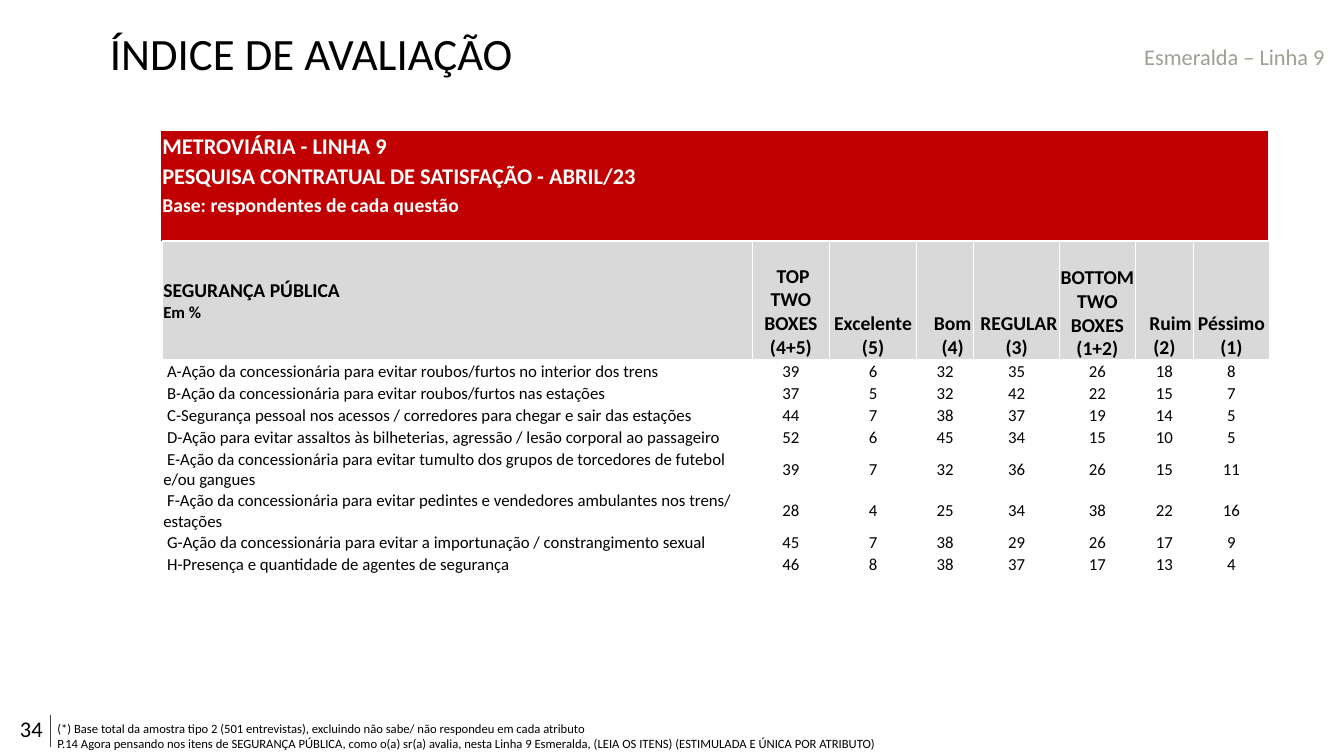
from lxml import etree
from pptx import Presentation
from pptx.dml.color import RGBColor
from pptx.enum.shapes import MSO_CONNECTOR
from pptx.enum.text import MSO_ANCHOR, PP_ALIGN
from pptx.oxml.ns import qn
from pptx.util import Inches, Pt

LEFT, CENTER = PP_ALIGN.LEFT, PP_ALIGN.CENTER
TOP, MIDDLE, BOTTOM = MSO_ANCHOR.TOP, MSO_ANCHOR.MIDDLE, MSO_ANCHOR.BOTTOM
STRAIGHT = MSO_CONNECTOR.STRAIGHT
FONT = "Calibri"
NO_STYLE = "{2D5ABB26-0587-4C30-8999-92F81FD0307C}"
BLACK, WHITE, RED, SILVER = "000000", "FFFFFF", "C00000", "D9D9D9"
GRAY, DARK = "9F9F95", "404040"

TITLE = "ÍNDICE DE AVALIAÇÃO"
LINE_NAME = "Esmeralda – Linha 9"
PAGE = "34"
NOTES = [
    "(*) Base total da amostra tipo 2 (501 entrevistas), excluindo não sabe/ não respondeu em cada atributo",
    "P.14 Agora pensando nos itens de SEGURANÇA PÚBLICA, como o(a) sr(a) avalia, nesta Linha 9 Esmeralda, "
    "(LEIA OS ITENS) (ESTIMULADA E ÚNICA POR ATRIBUTO)",
]

BANNER = [
    ("METROVIÁRIA - LINHA 9", 16, 0.3),
    ("PESQUISA CONTRATUAL DE SATISFAÇÃO - ABRIL/23", 16, 0.3),
    ("Base: respondentes de cada questão", 14, 0.28),
    ("", 10, 0.21),
]
BANNER_COLS = [5.19, 0.77, 0.85, 0.6, 0.85, 1.02, 0.6, 1.1]

TOPIC = [("SEGURANÇA PÚBLICA", 14), ("Em %", 12)]
HEADERS = [
    (" TOP TWO BOXES (4+5)", 0, 0),
    ("Excelente (5)", 0, 0),
    ("Bom (4)", 0.15, 0),
    (" REGULAR (3)", 0, 0),
    (" BOTTOM TWO BOXES (1+2)", 0, 0),
    ("Ruim (2)", 0, 0.12),
    ("Péssimo (1)", 0, 0),
]
RATING_COLS = [5.85, 0.77, 0.86, 0.57, 0.85, 0.75, 0.58, 0.75]
HEADER_H, ONE_LINE, TWO_LINES = 1.18, 0.22, 0.41
RATINGS = [
    (" A-Ação da concessionária para evitar roubos/furtos no interior dos trens",
     (39, 6, 32, 35, 26, 18, 8), ONE_LINE),
    (" B-Ação da concessionária para evitar roubos/furtos nas estações",
     (37, 5, 32, 42, 22, 15, 7), ONE_LINE),
    (" C-Segurança pessoal nos acessos / corredores para chegar e sair das estações",
     (44, 7, 38, 37, 19, 14, 5), ONE_LINE),
    (" D-Ação para evitar assaltos às bilheterias, agressão / lesão corporal ao passageiro",
     (52, 6, 45, 34, 15, 10, 5), ONE_LINE),
    (" E-Ação da concessionária para evitar tumulto dos grupos de torcedores de futebol e/ou gangues",
     (39, 7, 32, 36, 26, 15, 11), TWO_LINES),
    (" F-Ação da concessionária para evitar pedintes e vendedores ambulantes nos trens/ estações",
     (28, 4, 25, 34, 38, 22, 16), TWO_LINES),
    (" G-Ação da concessionária para evitar a importunação / constrangimento sexual",
     (45, 7, 38, 29, 26, 17, 9), ONE_LINE),
    (" H-Presença e quantidade de agentes de segurança",
     (46, 8, 38, 37, 17, 13, 4), ONE_LINE),
]


def rgb(color):
    return RGBColor.from_string(color)


def add_run(p, text, size, color=BLACK, bold=False):
    r = p.add_run()
    r.text = text
    r.font.name, r.font.size, r.font.bold = FONT, Pt(size), bold
    r.font.color.rgb = rgb(color)


def add_text(s, box, lines, size, color=BLACK, wrap=False):
    tf = s.shapes.add_textbox(*map(Inches, box)).text_frame
    tf.word_wrap = wrap
    for i, line in enumerate(lines):
        p = tf.paragraphs[0] if i == 0 else tf.add_paragraph()
        add_run(p, line, size, color)


def add_grid(s, left, top, cols, heights):
    frame = s.shapes.add_table(len(heights), len(cols), Inches(left), Inches(top),
                               Inches(sum(cols)), Inches(sum(heights)))
    table = frame.table
    table.first_row = table.horz_banding = False
    table._tbl.tblPr.find(qn("a:tableStyleId")).text = NO_STYLE
    for col, width in zip(table.columns, cols):
        col.width = Inches(width)
    for row, height in zip(table.rows, heights):
        row.height = Inches(height)
    return table


def format_cell(cell, fill=None, anchor=MIDDLE, align=LEFT):
    cell.margin_left = cell.margin_top = cell.margin_right = Inches(0.01)
    cell.margin_bottom = 0
    cell.vertical_anchor = anchor
    if fill:
        cell.fill.solid()
        cell.fill.fore_color.rgb = rgb(fill)
    else:
        cell.fill.background()
    p = cell.text_frame.paragraphs[0]
    p.alignment = align
    return p


def add_borders(cell, color):
    tcPr = cell._tc.get_or_add_tcPr()
    for i, side in enumerate(("lnL", "lnR", "lnT", "lnB")):
        ln = etree.Element(qn(f"a:{side}"), w=str(Pt(1)))
        solid = etree.SubElement(ln, qn("a:solidFill"))
        etree.SubElement(solid, qn("a:srgbClr"), val=color)
        tcPr.insert(i, ln)


def add_banner(s):
    table = add_grid(s, 1.6, 1.3, BANNER_COLS, [height for _, _, height in BANNER])
    for i, (text, size, _) in enumerate(BANNER):
        for j in range(len(BANNER_COLS)):
            p = format_cell(table.cell(i, j), RED)
            if j == 0 and text:
                add_run(p, text, size, WHITE, True)
            else:
                etree.SubElement(p._p, qn("a:endParaRPr"), sz=str(size * 100))
    table.cell(1, 0).merge(table.cell(1, 1))


def add_ratings(s):
    heights = [HEADER_H] + [height for _, _, height in RATINGS]
    table = add_grid(s, 1.61, 2.39, RATING_COLS, heights)
    p = format_cell(table.cell(0, 0), SILVER)
    for i, (text, size) in enumerate(TOPIC):
        if i:
            p.add_line_break()
        add_run(p, text, size, bold=True)
    for j, (text, margin, indent) in enumerate(HEADERS, 1):
        p = format_cell(table.cell(0, j), SILVER, BOTTOM, CENTER)
        pPr = p._p.get_or_add_pPr()
        pPr.set("marL", str(Inches(margin)))
        pPr.set("indent", str(Inches(indent)))
        add_run(p, text, 14, bold=True)
    for i, (label, values, _) in enumerate(RATINGS, 1):
        add_run(format_cell(table.cell(i, 0)), label, 12)
        for j, value in enumerate(values, 1):
            add_run(format_cell(table.cell(i, j), align=CENTER), str(value), 12)
    for cell in table.iter_cells():
        add_borders(cell, WHITE)


def add_title(s):
    sp = s.shapes.title
    sp.left, sp.top, sp.width, sp.height = map(Inches, (1.09, 0.25, 9.99, 0.55))
    tf = sp.text_frame
    tf.margin_left = tf.margin_right = tf.margin_bottom = 0
    tf.margin_top = Inches(0.01)
    tf.vertical_anchor = TOP
    p = tf.paragraphs[0]
    p.alignment = LEFT
    add_run(p, TITLE, 32)


def main():
    prs = Presentation()
    prs.slide_width, prs.slide_height = Inches(13.33), Inches(7.5)
    s = prs.slides.add_slide(prs.slide_layouts[5])
    add_title(s)
    add_text(s, (0.1, 7.05, 0.56, 0.37), [PAGE], 16)
    divider = s.shapes.add_connector(STRAIGHT, *map(Inches, (0.5, 7.09, 0.5, 7.41)))
    divider.line.color.rgb = rgb(DARK)
    divider.line.width = Pt(0.5)
    etree.SubElement(divider._element.spPr, qn("a:effectLst"))
    add_text(s, (11.25, 0.38, 2.01, 0.37), [LINE_NAME], 16, GRAY)
    add_banner(s)
    add_ratings(s)
    add_text(s, (0.47, 7.1, 10.36, 0.4), NOTES, 9, wrap=True)
    prs.save("out.pptx")


if __name__ == "__main__":
    main()
